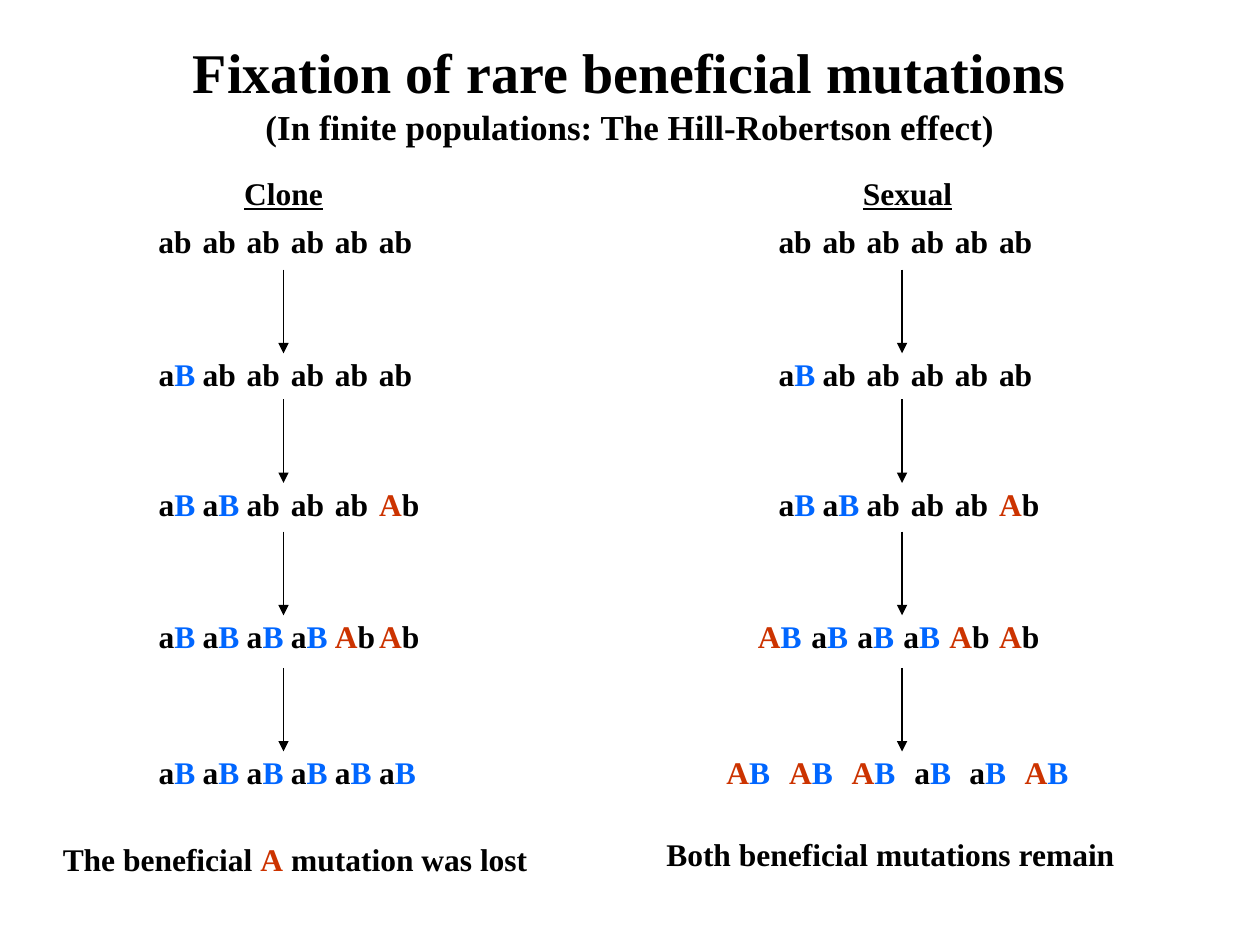
from dataclasses import dataclass
from typing import Optional

from lxml.etree import SubElement
from pptx import Presentation
from pptx.dml.color import RGBColor
from pptx.enum.shapes import MSO_CONNECTOR
from pptx.enum.text import MSO_ANCHOR, MSO_AUTO_SIZE, PP_ALIGN
from pptx.oxml.ns import qn
from pptx.util import Pt

BLACK = RGBColor(0x00, 0x00, 0x00)
BLUE = RGBColor(0x00, 0x66, 0xFF)
RED = RGBColor(0xCC, 0x33, 0x00)
ALLELE_COLORS = {"A": RED, "B": BLUE}
FONT = "Times New Roman"

BOX_HEIGHT = 28.8
GENOTYPE_WIDTHS = {"ab": 33.84, "aB": 35.28, "Ab": 37.44, "AB": 39.6}
GENOTYPE_PITCH = 25.2
HEADING_TOP = 95.8
GENERATION_TOPS = (123.1, 199.4, 273.6, 349.2, 427)
ARROW_TOPS = (154.1, 228.2, 303.8, 381.6)
ARROW_LENGTH = 47.8


@dataclass(frozen=True)
class Label:
    runs: tuple[tuple[str, RGBColor], ...]
    left: float
    top: float
    width: float
    underline: bool = False


@dataclass(frozen=True)
class Generation:
    """Genotypes on the regular pitch, or packed with a box overlap if given."""
    genotypes: str
    left: float
    overlap: Optional[float] = None


@dataclass(frozen=True)
class Population:
    heading: Label
    arrow_x: float
    generations: tuple[Generation, ...]
    outcome: Label


CLONE_LEFT, SEXUAL_LEFT = 83.5, 437.8

POPULATIONS = (
    Population(
        Label((("Clone", BLACK),), 132.5, HEADING_TOP, 59.8, underline=True),
        162,
        (
            Generation("ab ab ab ab ab ab", CLONE_LEFT),
            Generation("aB ab ab ab ab ab", CLONE_LEFT),
            Generation("aB aB ab ab ab Ab", CLONE_LEFT),
            Generation("aB aB aB aB Ab Ab", CLONE_LEFT),
            Generation("aB aB aB aB aB aB", CLONE_LEFT),
        ),
        Label((("The beneficial ", BLACK), ("A", RED),
               (" mutation was lost", BLACK)), 28.8, 476.6, 280),
    ),
    Population(
        Label((("Sexual", BLACK),), 486, HEADING_TOP, 65.5, underline=True),
        515.5,
        (
            Generation("ab ab ab ab ab ab", SEXUAL_LEFT),
            Generation("aB ab ab ab ab ab", SEXUAL_LEFT),
            Generation("aB aB ab ab ab Ab", SEXUAL_LEFT),
            Generation("AB aB aB aB Ab Ab", 426, overlap=9),
            Generation("AB AB AB aB aB AB", 408, overlap=3.8),
        ),
        Label((("Both beneficial mutations remain", BLACK),),
              373.7, 473.8, 270.7),
    ),
)


def add_title(s) -> None:
    title = s.shapes.title
    title.left, title.top, title.width, title.height = (
        Pt(0), Pt(18), Pt(720), Pt(69.8))
    tf = title.text_frame
    tf.auto_size = MSO_AUTO_SIZE.SHAPE_TO_FIT_TEXT
    tf.vertical_anchor = MSO_ANCHOR.TOP
    tf.text = ("Fixation of rare beneficial mutations\n"
               "(In finite populations: The Hill-Robertson effect)")
    for p, size in zip(tf.paragraphs, (32, 20)):
        p.alignment = PP_ALIGN.CENTER
        p.font.name, p.font.size, p.font.bold = FONT, Pt(size), True
        p.font.color.rgb = BLACK


def add_label(s, label: Label) -> None:
    sp = s.shapes.add_textbox(Pt(label.left), Pt(label.top),
                              Pt(label.width), Pt(BOX_HEIGHT))
    tf = sp.text_frame
    tf.word_wrap = False
    tf.auto_size = MSO_AUTO_SIZE.SHAPE_TO_FIT_TEXT
    p = tf.paragraphs[0]
    p.font.name, p.font.size, p.font.bold = FONT, Pt(18), True
    p.font.underline = label.underline
    for text, color in label.runs:
        r = p.add_run()
        r.text = text
        r.font.color.rgb = color


def add_generation(s, generation: Generation, top: float) -> None:
    left = generation.left
    for genotype in generation.genotypes.split():
        width = GENOTYPE_WIDTHS[genotype]
        if genotype == "ab":
            runs = ((genotype, BLACK),)
        else:
            runs = tuple((a, ALLELE_COLORS.get(a, BLACK)) for a in genotype)
        add_label(s, Label(runs, left, top, width))
        if generation.overlap is None:
            left += GENOTYPE_PITCH
        else:
            left += width - generation.overlap


def add_down_arrow(s, x: float, top: float) -> None:
    sp = s.shapes.add_connector(MSO_CONNECTOR.STRAIGHT, Pt(x), Pt(top),
                                Pt(x), Pt(top + ARROW_LENGTH))
    sp.line.color.rgb = BLACK
    sp.line.width = Pt(0.75)
    SubElement(sp.line._get_or_add_ln(), qn("a:tailEnd"), type="triangle")
    SubElement(sp._element.spPr, qn("a:effectLst"))


def add_population(s, population: Population) -> None:
    add_label(s, population.heading)
    for generation, top in zip(population.generations, GENERATION_TOPS):
        add_generation(s, generation, top)
    for top in ARROW_TOPS:
        add_down_arrow(s, population.arrow_x, top)
    add_label(s, population.outcome)


def main() -> None:
    prs = Presentation()
    prs.slide_width, prs.slide_height = Pt(720), Pt(540)
    s = prs.slides.add_slide(prs.slide_layouts.get_by_name("Title Only"))
    add_title(s)
    for population in POPULATIONS:
        add_population(s, population)
    prs.save("out.pptx")


if __name__ == "__main__":
    main()
